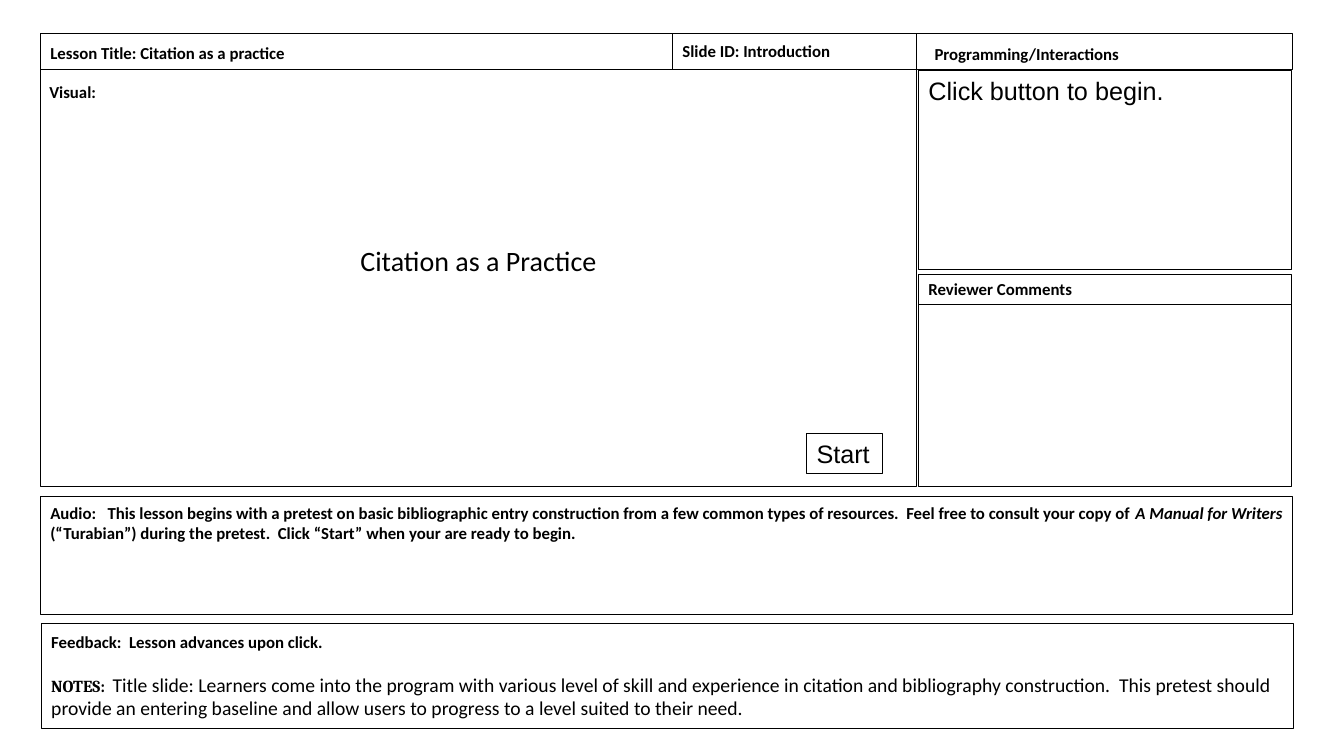
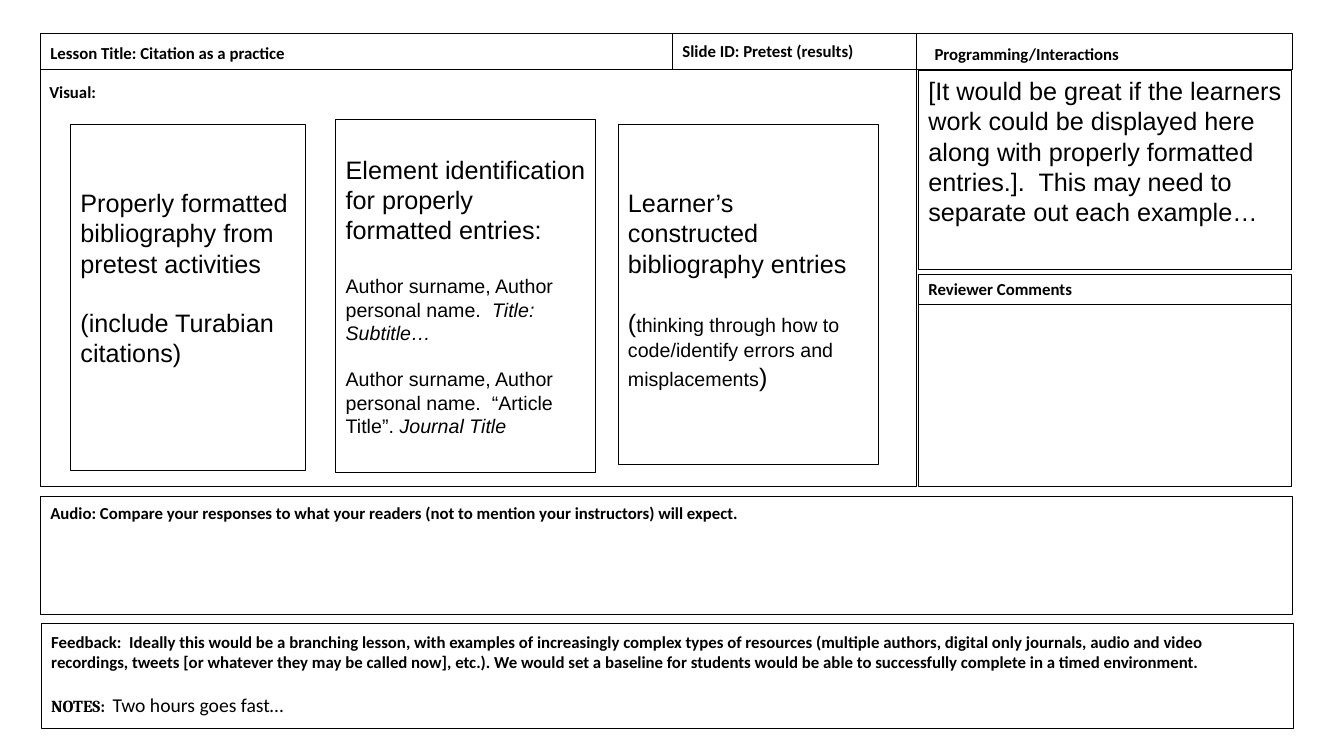
from lxml import etree
from pptx import Presentation
from pptx.dml.color import RGBColor
from pptx.enum import shapes, text
from pptx.oxml.ns import qn
from pptx.util import Inches, Pt

COLORS = {"ink": "000000", "paper": "FFFFFF"}

STYLES = {
    "label": ("Calibri", 12, True, False),
    "label italic": ("Calibri", 12, True, True),
    "notes label": ("Cambria", 12, True, False),
    "notes": ("Calibri", 14, False, False),
    "visual": ("Calibri", 20, False, False),
    "body": ("Arial", 18, False, False),
    "small": ("Arial", 14, False, False),
    "small italic": ("Arial", 14, False, True),
}

LESSON = "Lesson Title: Citation as a practice"

BOARDS = [
    {
        "id": "Slide ID: Introduction",
        "visual": "Citation as a Practice",
        "interaction": "Click button to begin.",
        "audio": [
            ("Audio:   This lesson begins with a pretest on basic bibliographic entry "
             "construction from a few common types of resources.  Feel free to consult "
             "your copy of ", "label"),
            ("A Manual for Writers ", "label italic"),
            ("(“Turabian”) during the pretest.  Click “Start” when your are ready to "
             "begin.", "label"),
        ],
        "feedback": "Feedback:  Lesson advances upon click.",
        "notes": "Title slide: Learners come into the program with various level of skill "
                 "and experience in citation and bibliography construction.  This pretest "
                 "should provide an entering baseline and allow users to progress to a "
                 "level suited to their need.",
        "cards": [
            {"at": (8, 4.3, 0.75, 0.4), "inset": 0.05,
             "paras": [(0, [("Start", "body")])]},
        ],
    },
    {
        "id": "Slide ID: Pretest (results)",
        "visual": "",
        "interaction": "[It would be great if the learners work could be displayed here "
                       "along with properly formatted entries.].  This may need to "
                       "separate out each example…",
        "audio": [
            ("Audio: Compare your responses to what your readers (not to mention your "
             "instructors) will expect.", "label"),
        ],
        "feedback": "Feedback:  Ideally this would be a branching lesson, with examples of "
                    "increasingly complex types of resources (multiple authors, digital "
                    "only journals, audio and video recordings, tweets [or whatever they "
                    "may be called now], etc.). We would set a baseline for students would "
                    "be able to successfully complete in a timed environment.",
        "notes": "Two hours goes fast…",
        "cards": [
            {"at": (0.7, 1.24, 2.33, 3.43), "inset": 0.62, "paras": [
                (0, [("Properly formatted bibliography from pretest activities", "body")]),
                (20.7, [("(include Turabian citations)", "body")]),
            ]},
            {"at": (3.33, 1.19, 2.58, 3.5), "inset": 0.34, "paras": [
                (0, [("Element identification for properly formatted entries:", "body")]),
                (20.7, [("Author surname, Author personal name.  ", "small"),
                        ("Title: Subtitle…", "small italic")]),
                (16.1, [("Author surname, Author personal name.  “Article Title”. ", "small"),
                        ("Journal Title", "small italic")]),
            ]},
            {"at": (6.13, 1.24, 2.58, 3.37), "inset": 0.62, "paras": [
                (0, [("Learner’s constructed bibliography entries", "body")]),
                (20.7, [("(", "body"),
                        ("thinking through how to code/identify errors and misplacements",
                         "small"),
                        (")", "body")]),
            ]},
        ],
    },
]

LEFT, TOP, WIDTH = 0.4, 0.33, 12.42
HEADER, DIVIDER = 0.36, 6.67
SIDE, SIDE_WIDTH = 9.11, 3.7
HEADER_BOTTOM = TOP + HEADER


def color(name):
    return RGBColor.from_string(COLORS[name])


def write(box, paras, inset=0.05, middle=False, align=text.PP_ALIGN.LEFT):
    frame = box.text_frame
    frame.word_wrap = True
    frame.auto_size = text.MSO_AUTO_SIZE.NONE
    frame.vertical_anchor = text.MSO_ANCHOR.MIDDLE if middle else text.MSO_ANCHOR.TOP
    frame.margin_left = frame.margin_right = Inches(0.1)
    frame.margin_top, frame.margin_bottom = Inches(inset), Inches(0.05)
    for index, (gap, spans) in enumerate(paras):
        para = frame.add_paragraph() if index else frame.paragraphs[0]
        para.alignment = align
        para.space_before = Pt(gap)
        for words, style in spans:
            span = para.add_run()
            span.text = words
            font = span.font
            font.name, size, font.bold, font.italic = STYLES[style]
            font.size = Pt(size)
            font.color.rgb = color("ink")


def add_panel(page, at, filled=False):
    panel = page.shapes.add_shape(shapes.MSO_SHAPE.RECTANGLE, *map(Inches, at))
    panel.shadow.inherit = False
    if filled:
        panel.fill.solid()
        panel.fill.fore_color.rgb = color("paper")
    else:
        panel.fill.background()
    panel.line.color.rgb = color("ink")
    panel.line.width = Pt(0.75)
    return panel


def add_label(page, at, words, middle=False):
    box = page.shapes.add_textbox(*map(Inches, at))
    write(box, [(0, [(words, "label")])], middle=middle)


def add_divider(page):
    x = Inches(DIVIDER)
    divider = page.shapes.add_connector(
        shapes.MSO_CONNECTOR.STRAIGHT, x, Inches(HEADER_BOTTOM), x, Inches(TOP))
    divider.line.color.rgb = color("ink")
    divider.line.width = Pt(0.75)
    etree.SubElement(divider.element.spPr, qn("a:effectLst"))


def add_title(page):
    title = page.shapes.title
    title.left, title.top, title.width, title.height = map(Inches, (LEFT, 0.37, 6.19, 0.3))
    write(title, [(0, [(LESSON, "label")])])
    page.shapes.element.append(title.element)


def add_board(deck, board):
    page = deck.slides.add_slide(deck.slide_layouts[5])
    visual = add_panel(page, (LEFT, TOP, 8.69, 4.5), filled=True)
    if board["visual"]:
        write(visual, [(0, [(board["visual"], "visual")])], middle=True,
              align=text.PP_ALIGN.CENTER)
    add_panel(page, (LEFT, TOP, WIDTH, HEADER))
    add_divider(page)
    add_title(page)
    add_label(page, (DIVIDER, 0.36, 2.39, 0.3), board["id"])
    add_label(page, (9.17, 0.41, 2.25, 0.25), "Programming/Interactions", middle=True)
    add_label(page, (0.39, 0.76, 1.19, 0.3), "Visual:")

    interaction = add_panel(page, (SIDE, 0.7, SIDE_WIDTH, 1.97))
    write(interaction, [(0, [(board["interaction"], "body")])])
    reviewer = add_panel(page, (SIDE, 2.72, SIDE_WIDTH, 0.3))
    write(reviewer, [(0, [("Reviewer Comments", "label")])], middle=True)
    add_panel(page, (SIDE, 3.02, SIDE_WIDTH, 1.81))

    audio = add_panel(page, (LEFT, 4.93, WIDTH, 1.17), filled=True)
    write(audio, [(0, board["audio"])], inset=0.06)
    feedback = add_panel(page, (LEFT + 0.01, 6.19, WIDTH, 1.04), filled=True)
    write(feedback, [
        (0, [(board["feedback"], "label")]),
        (14.6, [("NOTES:  ", "notes label"), (board["notes"], "notes")]),
    ], inset=0.08)

    for card in board["cards"]:
        write(add_panel(page, card["at"]), card["paras"], inset=card["inset"])


def main():
    deck = Presentation()
    deck.slide_width, deck.slide_height = Inches(13.33), Inches(7.5)
    for board in BOARDS:
        add_board(deck, board)
    deck.save("out.pptx")


if __name__ == "__main__":
    main()
